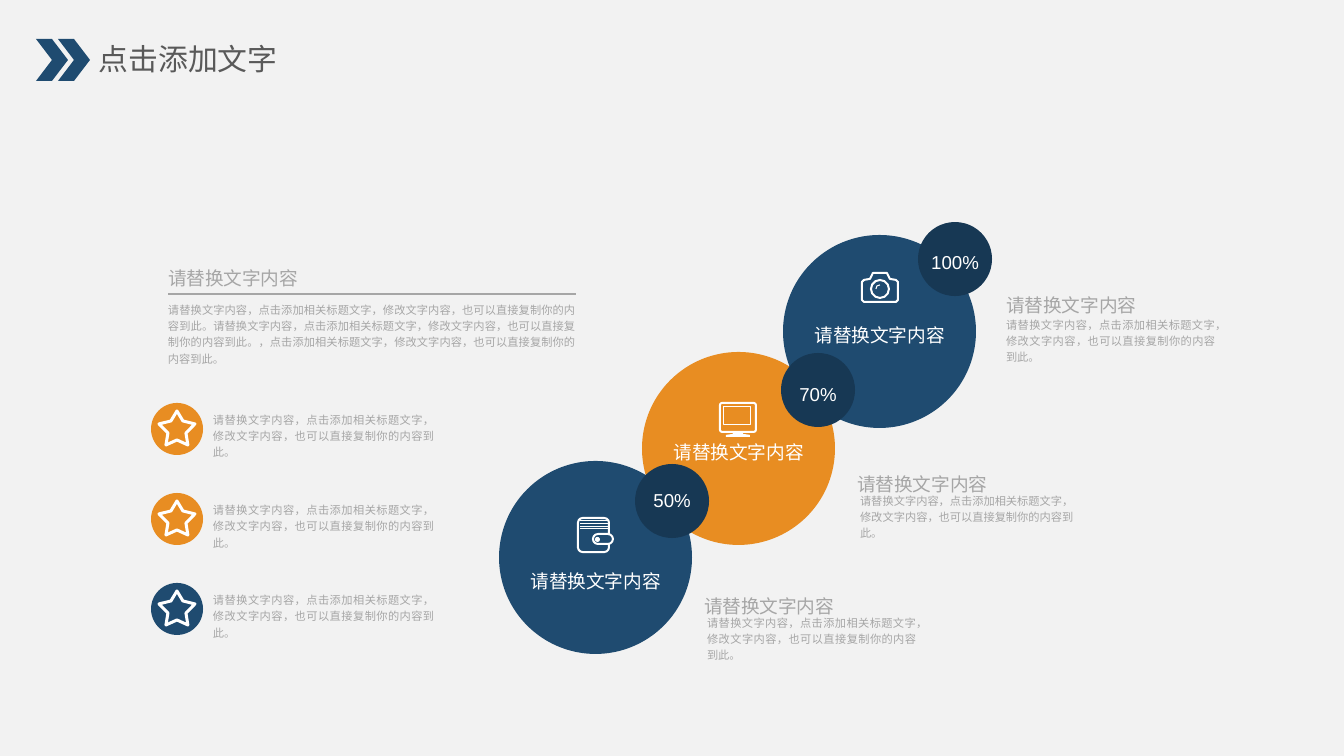
from lxml import etree
from pptx import Presentation
from pptx.dml.color import RGBColor
from pptx.enum.shapes import MSO_CONNECTOR, MSO_SHAPE
from pptx.enum.text import PP_ALIGN
from pptx.oxml.ns import qn
from pptx.util import Pt

EMU_PER_PX = 914400 / 134.4
SLIDE_WIDTH, SLIDE_HEIGHT = 1344, 756

NAVY = RGBColor(0x1F, 0x4B, 0x70)
DARK_NAVY = RGBColor(0x17, 0x38, 0x54)
ORANGE = RGBColor(0xE8, 0x8D, 0x22)
WHITE = RGBColor(0xFF, 0xFF, 0xFF)
GRAY = RGBColor(0xA6, 0xA6, 0xA6)
DARK_GRAY = RGBColor(0x59, 0x59, 0x59)
BACKGROUND = RGBColor(0xF2, 0xF2, 0xF2)

CHEVRON = MSO_SHAPE.CHEVRON
ELLIPSE = MSO_SHAPE.OVAL
RECTANGLE = MSO_SHAPE.RECTANGLE
ROUNDED = MSO_SHAPE.ROUNDED_RECTANGLE
STRAIGHT = MSO_CONNECTOR.STRAIGHT
LEFT, CENTER, JUSTIFY = PP_ALIGN.LEFT, PP_ALIGN.CENTER, PP_ALIGN.JUSTIFY

HEADING = "请替换文字内容"
SENTENCE = "请替换文字内容，点击添加相关标题文字，修改文字内容，也可以直接复制你的内容到此。"
INTRODUCTION = SENTENCE * 2 + SENTENCE.removeprefix(HEADING)

WIDE_INSETS = (13, 7)
NARROW_INSETS = (9, 5)
STAGE_SIZE, BADGE_SIZE, STAR_SIZE = 193, 74, 52
LABEL_HEIGHT = 40

# left, top, colour, label offset from the top
STAGES = [(499, 461, NAVY, 97), (642, 352, ORANGE, 77), (783, 235, NAVY, 77)]
# left, top, text, label offset from the top
BADGES = [(918, 222, "100%", 17), (781, 353, "70%", 18), (635, 464, "50%", 13)]
# heading left and top, body left, top and width
CAPTIONS = [(993, 282, 993, 309, 235), (844, 461, 847, 485, 239), (691, 583, 694, 607, 235)]
STAR_COLORS = [ORANGE, ORANGE, NAVY]
STAR_TOP, STAR_PITCH = 403, 90

STAR_RIGHT_HALF = [(0, -18), (6, -8), (18, -5), (9, 4), (11, 16), (0, 11)]
STAR_POINTS = STAR_RIGHT_HALF + [(-x, y) for x, y in STAR_RIGHT_HALF[-2:0:-1]]
CAMERA_BODY = [(864, 280), (870, 279), (873, 273), (887, 273), (890, 279), (896, 280),
               (898, 282), (898, 300), (896, 302), (864, 302), (862, 300), (862, 282)]
LENS_GLEAM = [(876, 289), (877, 286), (880, 285)]
MONITOR_STAND = [(733, 432), (743, 432), (743, 434), (750, 435),
                 (750, 437), (726, 437), (726, 435), (733, 434)]


def px(*lengths):
    return [round(length * EMU_PER_PX) for length in lengths]


def paint(shape, fill=None, line=None, line_width=2):
    shape.shadow.inherit = False
    if fill is None:
        shape.fill.background()
    else:
        shape.fill.solid()
        shape.fill.fore_color.rgb = fill
    if line is None:
        shape.line.fill.background()
    else:
        shape.line.color.rgb = line
        shape.line.width = px(line_width)[0]


def add_preset(slide, kind, box, rounding=None, **colors):
    shape = slide.shapes.add_shape(kind, *px(*box))
    if rounding is not None:
        shape.adjustments[0] = rounding
    paint(shape, **colors)


def add_outline(slide, points, closed=True, **colors):
    """Draw straight segments through points given in px."""
    builder = slide.shapes.build_freeform(*points[0], scale=EMU_PER_PX)
    builder.add_line_segments(points[1:], close=closed)
    paint(builder.convert_to_shape(), **colors)


def add_line(slide, start, end, color, width):
    connector = slide.shapes.add_connector(STRAIGHT, *px(*start, *end))
    connector.line.color.rgb = color
    connector.line.width = px(width)[0]
    etree.SubElement(connector._element.spPr, qn("a:effectLst"))


def add_text(slide, text, box, size, color, align=LEFT, insets=WIDE_INSETS,
             wrap=True, font_name="Arial", line_spacing=1.2):
    frame = slide.shapes.add_textbox(*px(*box)).text_frame
    paragraph = frame.paragraphs[0]
    run = paragraph.add_run()
    horizontal, vertical = px(*insets)
    formats = {
        frame: {"word_wrap": wrap, "margin_left": horizontal, "margin_right": horizontal,
                "margin_top": vertical, "margin_bottom": vertical},
        paragraph: {"alignment": align, "line_spacing": line_spacing},
        run: {"text": text},
        run.font: {"name": font_name, "size": Pt(size)},
    }
    for target, values in formats.items():
        for name, value in values.items():
            setattr(target, name, value)
    run.font.color.rgb = color
    east_asian = etree.SubElement(run.font._element, qn("a:ea"))
    east_asian.set("typeface", font_name)


def add_labelled_circle(slide, left, top, size, color, label, label_offset):
    add_preset(slide, ELLIPSE, (left, top, size, size), fill=color)
    add_text(slide, label, (left, top + label_offset, size, LABEL_HEIGHT),
             10, WHITE, CENTER, wrap=False)


def add_header(slide):
    add_text(slide, "点击添加文字", (90, 36, 263, 46), 16, DARK_GRAY, insets=NARROW_INSETS,
             font_name="Noto Sans CJK SC", line_spacing=1.0)
    for left in (36, 58):
        add_preset(slide, CHEVRON, (left, 39, 32, 42), fill=NAVY)


def add_wallet(slide):
    add_preset(slide, ROUNDED, (578, 518, 31, 34), rounding=0.15, line=WHITE)
    for y in (521, 524, 527, 529):
        add_line(slide, (580, y), (608, y), WHITE, 1)
    add_preset(slide, ROUNDED, (593, 534, 20, 10), rounding=0.5, fill=NAVY, line=WHITE)
    add_preset(slide, ELLIPSE, (595, 537, 5, 5), fill=WHITE)


def add_monitor(slide):
    add_preset(slide, ROUNDED, (720, 403, 36, 29), rounding=0.08, line=WHITE)
    add_preset(slide, RECTANGLE, (724, 407, 27, 18), line=WHITE, line_width=1)
    add_outline(slide, MONITOR_STAND, fill=WHITE)


def add_camera(slide):
    add_outline(slide, CAMERA_BODY, line=WHITE)
    add_preset(slide, ELLIPSE, (871, 280, 18, 18), line=WHITE)
    add_outline(slide, LENS_GLEAM, closed=False, line=WHITE, line_width=1)


def add_introduction(slide):
    add_text(slide, INTRODUCTION, (159, 296, 425, 75), 6, GRAY, JUSTIFY, NARROW_INSETS)
    add_text(slide, HEADING, (159, 257, 179, 36), 10, GRAY, insets=NARROW_INSETS)
    add_line(slide, (168, 294), (576, 294), GRAY, 2)


def add_star_item(slide, top, color):
    left, radius = 151, STAR_SIZE // 2
    add_preset(slide, ELLIPSE, (left, top, STAR_SIZE, STAR_SIZE), fill=color)
    points = [(left + radius + x, top + radius + y) for x, y in STAR_POINTS]
    add_outline(slide, points, line=WHITE, line_width=3)
    add_text(slide, SENTENCE, (204, top + 3, 239, 59), 6, GRAY, JUSTIFY, NARROW_INSETS)


def add_caption(slide, heading_left, heading_top, body_left, body_top, body_width):
    add_text(slide, HEADING, (heading_left, heading_top, 159, LABEL_HEIGHT), 10, GRAY, wrap=False)
    add_text(slide, SENTENCE, (body_left, body_top, body_width, 62), 6, GRAY, JUSTIFY)


def main():
    presentation = Presentation()
    presentation.slide_width, presentation.slide_height = px(SLIDE_WIDTH, SLIDE_HEIGHT)
    slide = presentation.slides.add_slide(presentation.slide_layouts[6])
    slide.background.fill.solid()
    slide.background.fill.fore_color.rgb = BACKGROUND

    add_header(slide)
    for left, top, color, label_offset in STAGES:
        add_labelled_circle(slide, left, top, STAGE_SIZE, color, HEADING, label_offset)
    for add_icon in (add_wallet, add_monitor, add_camera):
        add_icon(slide)
    for left, top, percentage, label_offset in BADGES:
        add_labelled_circle(slide, left, top, BADGE_SIZE, DARK_NAVY, percentage, label_offset)
    add_introduction(slide)
    for caption in CAPTIONS:
        add_caption(slide, *caption)
    for row, color in enumerate(STAR_COLORS):
        add_star_item(slide, STAR_TOP + row * STAR_PITCH, color)
    presentation.save("out.pptx")


if __name__ == "__main__":
    main()
